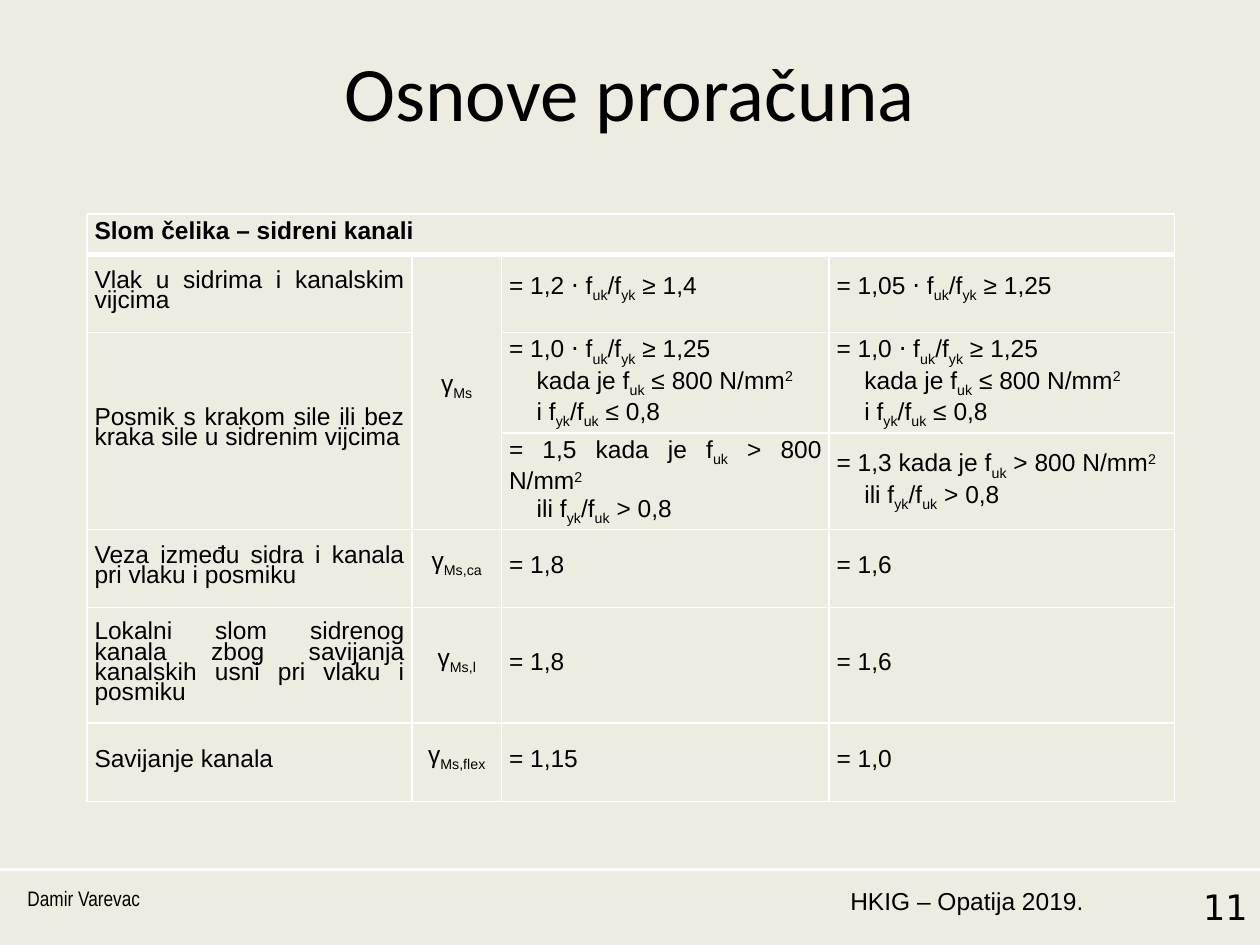
import pptx
import pptx.util
import pptx.dml.color
import pptx.enum.shapes
import pptx.enum.text
import pptx.oxml.ns
from lxml import etree

Inches = pptx.util.Inches
Pt = pptx.util.Pt
RGBColor = pptx.dml.color.RGBColor
ALIGN = pptx.enum.text.PP_ALIGN
ANCHOR = pptx.enum.text.MSO_ANCHOR
qn = pptx.oxml.ns.qn

BACKGROUND = RGBColor(0xEE, 0xEC, 0xE1)
BLACK = RGBColor(0, 0, 0)
WHITE = RGBColor(0xFF, 0xFF, 0xFF)

BASELINES = {"_": "-25000", "^": "30000"}
COLUMNS = [2.58, 0.71, 2.6, 2.74]
ROWS = [0.32, 0.62, 0.62, 0.62, 0.62, 0.92, 0.62]
MERGES = [((0, 0), (0, 3)), ((1, 1), (3, 1)), ((2, 0), (3, 0))]

LOW_STRENGTH = ["= 1,0 ⋅ f|_uk|/f|_yk| ≥ 1,25",
                "kada je f|_uk| ≤ 800 N/mm|^2",
                "i f|_yk|/f|_uk| ≤ 0,8"]
HIGH_STRENGTH = " kada je f|_uk| > 800 N/mm|^2"
HIGH_RATIO = "ili f|_yk|/f|_uk| > 0,8"
CELLS = [
    [["Slom čelika – sidreni kanali"], [], [], []],
    [["Vlak u sidrima i kanalskim vijcima"], ["γ|_Ms"],
     ["= 1,2 ⋅ f|_uk|/f|_yk| ≥ 1,4"], ["= 1,05 ⋅ f|_uk|/f|_yk| ≥ 1,25"]],
    [["Posmik s krakom sile ili bez kraka sile u sidrenim vijcima"], [],
     LOW_STRENGTH, LOW_STRENGTH],
    [[], [], ["= 1,5" + HIGH_STRENGTH, HIGH_RATIO],
     ["= 1,3" + HIGH_STRENGTH, HIGH_RATIO]],
    [["Veza između sidra i kanala pri vlaku i posmiku"], ["γ|_Ms,ca"],
     ["= 1,8"], ["= 1,6"]],
    [["Lokalni slom sidrenog kanala zbog savijanja kanalskih usni "
      "pri vlaku i posmiku"], ["γ|_Ms,l"], ["= 1,8"], ["= 1,6"]],
    [["Savijanje kanala"], ["γ|_Ms,flex"], ["= 1,15"], ["= 1,0"]],
]


def write(p, text, size=14, font="Arial", bold=False, align=ALIGN.LEFT,
          spacing=None, after=None, indent=None):
    p.alignment = align
    if spacing:
        p.line_spacing = Pt(spacing)
    if after:
        p.space_after = Pt(after)
    if indent:
        p._p.get_or_add_pPr().set("marL", str(Inches(indent)))
    for part in text.split("|"):
        r = p.add_run()
        r.text = part.lstrip("_^")
        r.font.size = Pt(size)
        r.font.name = font
        r.font.bold = bold
        r.font.color.rgb = BLACK
        if part[0] in BASELINES:
            r._r.get_or_add_rPr().set("baseline", BASELINES[part[0]])


def add_label(s, text, left, width, **style):
    tf = s.shapes.add_textbox(Inches(left), Inches(6.98),
                              Inches(width), Inches(0.52)).text_frame
    tf.word_wrap = True
    write(tf.paragraphs[0], text, **style)


def add_title(s, text):
    sp = s.shapes.title
    sp.left, sp.top = Inches(0.5), Inches(0.3)
    sp.width, sp.height = Inches(9), Inches(1.25)
    sp.text_frame.vertical_anchor = ANCHOR.TOP
    write(sp.text_frame.paragraphs[0], text, size=44, font="Calibri",
          align=ALIGN.CENTER)


def add_footer_line(s):
    line = s.shapes.add_connector(pptx.enum.shapes.MSO_CONNECTOR.STRAIGHT,
                                  0, Inches(6.9), Inches(10), Inches(6.9))
    line.line.color.rgb = WHITE
    line.line.width = Pt(1.5)
    etree.SubElement(line._element.spPr, qn("a:effectLst"))


def set_borders(cell, **widths):
    tcPr = cell._tc.get_or_add_tcPr()
    for side in "LRTB":
        ln = etree.SubElement(tcPr, qn("a:ln" + side),
                              w=str(Pt(widths.get(side, 1))))
        fill = etree.SubElement(ln, qn("a:solidFill"))
        etree.SubElement(fill, qn("a:srgbClr"), val=str(WHITE))


def fill_cell(cell, lines, row, column):
    cell.margin_left = cell.margin_right = Inches(0.06)
    cell.margin_top = cell.margin_bottom = 0
    cell.vertical_anchor = ANCHOR.MIDDLE
    set_borders(cell, T=3 if row == 1 else 1, B=3 if row == 0 else 1)
    cell.fill.background()
    single = len(lines) == 1
    tf = cell.text_frame
    for i, text in enumerate(lines):
        p = tf.add_paragraph() if i else tf.paragraphs[0]
        write(p, text, bold=row == 0,
              align=ALIGN.CENTER if column == 1 else ALIGN.JUSTIFY,
              spacing=11.5 if single else None,
              after=12 if single else None,
              indent=0.22 if i else None)


def add_factor_table(s):
    table = s.shapes.add_table(len(ROWS), len(COLUMNS), Inches(0.69), Inches(1.7),
                               Inches(sum(COLUMNS)), Inches(sum(ROWS))).table
    table.first_row = table.horz_banding = False
    for column, width in zip(table.columns, COLUMNS):
        column.width = Inches(width)
    for row, height in zip(table.rows, ROWS):
        row.height = Inches(height)
    for first, last in MERGES:
        table.cell(*first).merge(table.cell(*last))
    for i, row in enumerate(CELLS):
        for j, lines in enumerate(row):
            fill_cell(table.cell(i, j), lines, i, j)


def main():
    prs = pptx.Presentation()
    prs.slide_width, prs.slide_height = Inches(10), Inches(7.5)
    s = prs.slides.add_slide(prs.slide_layouts[5])
    s.background.fill.solid()
    s.background.fill.fore_color.rgb = BACKGROUND
    add_footer_line(s)
    add_label(s, "HKIG – Opatija 2019.", 6.57, 2.13, align=ALIGN.RIGHT)
    add_label(s, "Damir Varevac", 0.12, 2.17, size=12, font="Arial Narrow")
    add_label(s, "11", 8.78, 1.22, size=20, font="DejaVu Sans", align=ALIGN.RIGHT)
    add_title(s, "Osnove proračuna")
    add_factor_table(s)
    prs.save("out.pptx")


if __name__ == "__main__":
    main()
